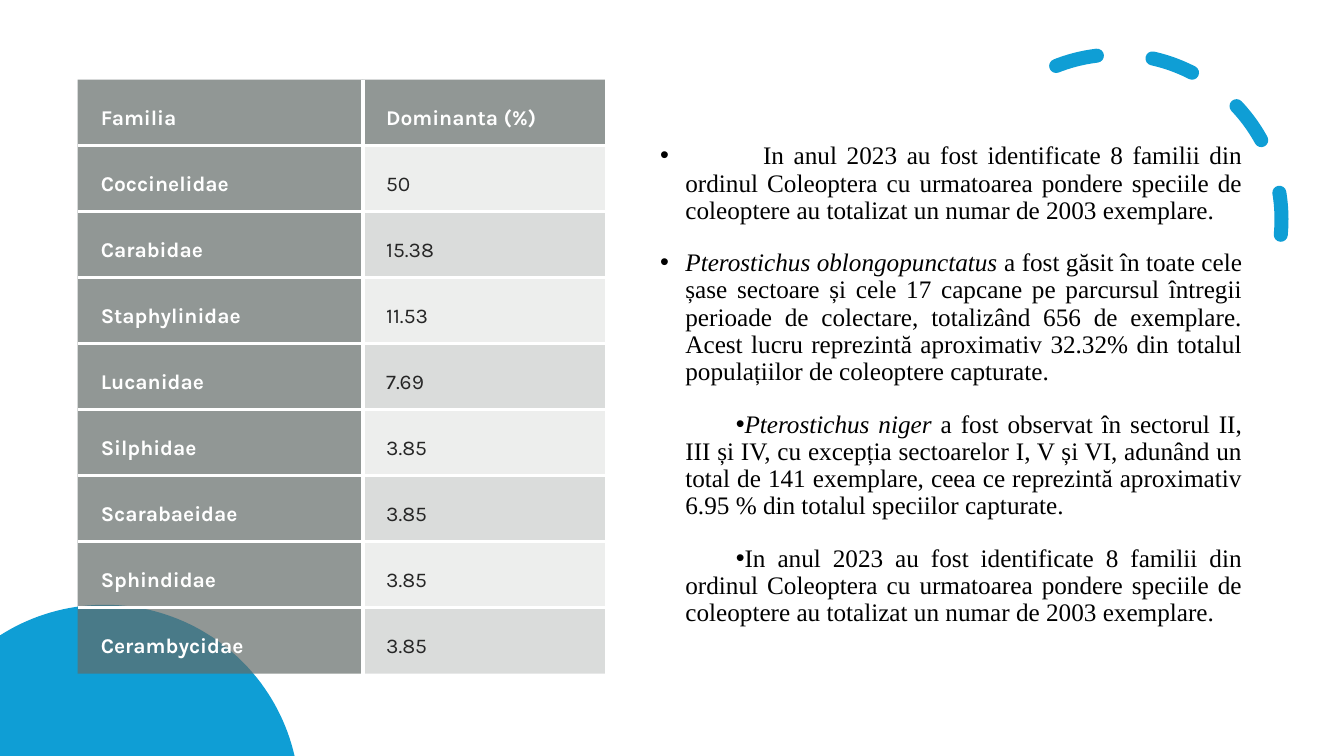
import math

from pptx import Presentation
from pptx import oxml
from pptx.dml.color import RGBColor
from pptx.enum import dml, shapes, text
from pptx.oxml import ns
from pptx.util import Inches, Pt

HUES = {"blue": "0F9ED5", "head": "636B68", "body": "878E8B",
        "white": "FFFFFF", "dark": "262626", "black": "000000"}
ROWS = [("Familia", "Dominanta (%)"), ("Coccinelidae", "50"),
        ("Carabidae", "15.38"), ("Staphylinidae", "11.53"),
        ("Lucanidae", "7.69"), ("Silphidae", "3.85"),
        ("Scarabaeidae", "3.85"), ("Sphindidae", "3.85"),
        ("Cerambycidae", "3.85")]
COUNT = ("In anul 2023 au fost identificate 8 familii din ordinul Coleoptera "
         "cu urmatoarea pondere speciile de coleoptere au totalizat un numar "
         "de 2003 exemplare.")
# First-line indent, italic lead, plain rest
NOTES = [
    (-0.25, "", "\t" + COUNT),
    (-0.25, "Pterostichus oblongopunctatus",
     " a fost găsit în toate cele șase sectoare și cele 17 capcane pe "
     "parcursul întregii perioade de colectare, totalizând 656 de exemplare. "
     "Acest lucru reprezintă aproximativ 32.32% din totalul populațiilor de "
     "coleoptere capturate."),
    (0.5, "Pterostichus niger",
     " a fost observat în sectorul II, III și IV, cu excepția sectoarelor I, "
     "V și VI, adunând un total de 141 exemplare, ceea ce reprezintă "
     "aproximativ 6.95 % din totalul speciilor capturate."),
    (0.5, "", COUNT),
]


def hue(name):
    return RGBColor.from_string(HUES[name])


def node(xml):
    return oxml.parse_xml(xml.replace(">", f' {ns.nsdecls("a")}>', 1))


def apply(item, form):
    for key, value in form.items():
        setattr(item, key, value)


def style(font, color, **form):
    apply(font, form)
    font.color.rgb = hue(color)


def add_arc(slide, left, top, size):
    arc = slide.shapes.add_shape(shapes.MSO_SHAPE.ARC, Inches(left),
                                 Inches(top), Inches(size), Inches(size))
    arc.shadow.inherit = False
    arc.adjustments[0], arc.adjustments[1] = 144.42, 0
    arc.rotation = 66.1
    arc._element.spPr.xfrm.set("flipH", "1")
    arc.fill.background()
    arc.line.color.rgb = hue("blue")
    apply(arc.line, {"width": Pt(10), "dash_style": dml.MSO_LINE.DASH})
    arc.line._ln.set("cap", "rnd")


def add_disc(slide, mid, top, radius, floor):
    """Draw the part of a disc that lies right of x = 0 and above the floor."""
    hub = top + radius
    start = -math.acos(mid / radius)
    start = -math.pi / 2 - (math.pi / 2 + start)
    first = -math.pi + math.acos(mid / radius)
    last = -math.asin((hub - floor) / radius)
    steps = 60
    turns = [first + (last - first) * i / steps for i in range(steps + 1)]
    rim = [(Inches(mid + radius * math.cos(t)),
            Inches(hub + radius * math.sin(t))) for t in turns]
    pen = slide.shapes.build_freeform(0, Inches(floor))
    pen.add_line_segments(rim, close=True)
    disc = pen.convert_to_shape()
    disc.shadow.inherit = False
    disc.fill.solid()
    disc.fill.fore_color.rgb = hue("blue")
    disc.line.fill.background()


def edge(cell, side, shown):
    fill = (f'<a:solidFill><a:srgbClr val="{HUES["white"]}"/></a:solidFill>'
            if shown else "<a:noFill/>")
    cell._tc.get_or_add_tcPr().append(
        node(f'<a:ln{side} w="{Pt(3)}">{fill}</a:ln{side}>'))


def paint(cell, color, alpha):
    cell.fill.solid()
    cell.fill.fore_color.rgb = hue(color)
    tint = cell._tc.tcPr.find(".//" + ns.qn("a:solidFill") + "/"
                              + ns.qn("a:srgbClr"))
    tint.append(node(f'<a:alpha val="{alpha * 1000}"></a:alpha>'))


def add_grid(slide, left, top, widths, height):
    frame = slide.shapes.add_table(
        len(ROWS), len(widths), Inches(left), Inches(top),
        Inches(sum(widths)), Inches(height * len(ROWS)))
    grid = frame.table
    apply(grid, {"first_row": False, "horz_banding": False})
    for col, width in zip(grid.columns, widths):
        col.width = Inches(width)
    for r, row in enumerate(ROWS):
        grid.rows[r].height = Inches(height)
        for c, word in enumerate(row):
            cell = grid.cell(r, c)
            apply(cell, {"margin_left": Inches(0.23),
                         "margin_right": Inches(0.14),
                         "margin_top": Inches(0.14),
                         "margin_bottom": Inches(0.14)})
            head = r == 0 or c == 0
            if head:
                paint(cell, "head", 70)
            else:
                paint(cell, "body", 15 if r % 2 else 30)
            fill = cell._tc.tcPr[0]
            for side, shown in (("L", c > 0), ("R", c < len(row) - 1),
                                ("T", r > 0), ("B", r < len(ROWS) - 1)):
                edge(cell, side, shown)
            cell._tc.tcPr.append(fill)
            para = cell.text_frame.paragraphs[0]
            apply(para, {"alignment": text.PP_ALIGN.JUSTIFY,
                         "line_spacing": 1.5, "space_after": Pt(8)})
            run = para.add_run()
            run.text = word
            style(run.font, "white" if head else "dark",
                  name="Karla", size=Pt(15), bold=head)


def add_notes(slide, left, top, width, height):
    box = slide.shapes.add_textbox(Inches(left), Inches(top),
                                   Inches(width), Inches(height))
    frame = box.text_frame
    frame.word_wrap = True
    for i, (indent, lead, rest) in enumerate(NOTES):
        para = frame.add_paragraph() if i else frame.paragraphs[0]
        apply(para, {"alignment": text.PP_ALIGN.JUSTIFY, "line_spacing": 0.9,
                     "space_before": Pt(10 if i else 0),
                     "space_after": Pt(8)})
        props = para._p.get_or_add_pPr()
        props.set("marL", str(Inches(0.25)))
        props.set("indent", str(Inches(indent)))
        props.append(node('<a:buFont typeface="Arial"></a:buFont>'))
        props.append(node('<a:buChar char="•"></a:buChar>'))
        if rest.startswith("\t"):
            props.append(node(f'<a:tabLst><a:tab pos="{Inches(1.02)}" '
                              'algn="l"/></a:tabLst>'))
        for words, slant in ((lead, True), (rest, False)):
            if words:
                run = para.add_run()
                run.text = words
                style(run.font, "black", name="Times New Roman",
                      size=Pt(18), italic=slant)


def main():
    deck = Presentation()
    apply(deck, {"slide_width": Inches(13.33), "slide_height": Inches(7.5)})
    slide = deck.slides.add_slide(deck.slide_layouts[6])
    add_arc(slide, 9.44, 0.54, 3.27)
    add_disc(slide, 1.04, 6, 1.93, 7.5)
    add_notes(slide, 6.45, 1.37, 5.97, 5.39)
    add_grid(slide, 0.77, 0.79, (2.83, 2.4), 0.64)
    deck.save("out.pptx")


if __name__ == "__main__":
    main()
